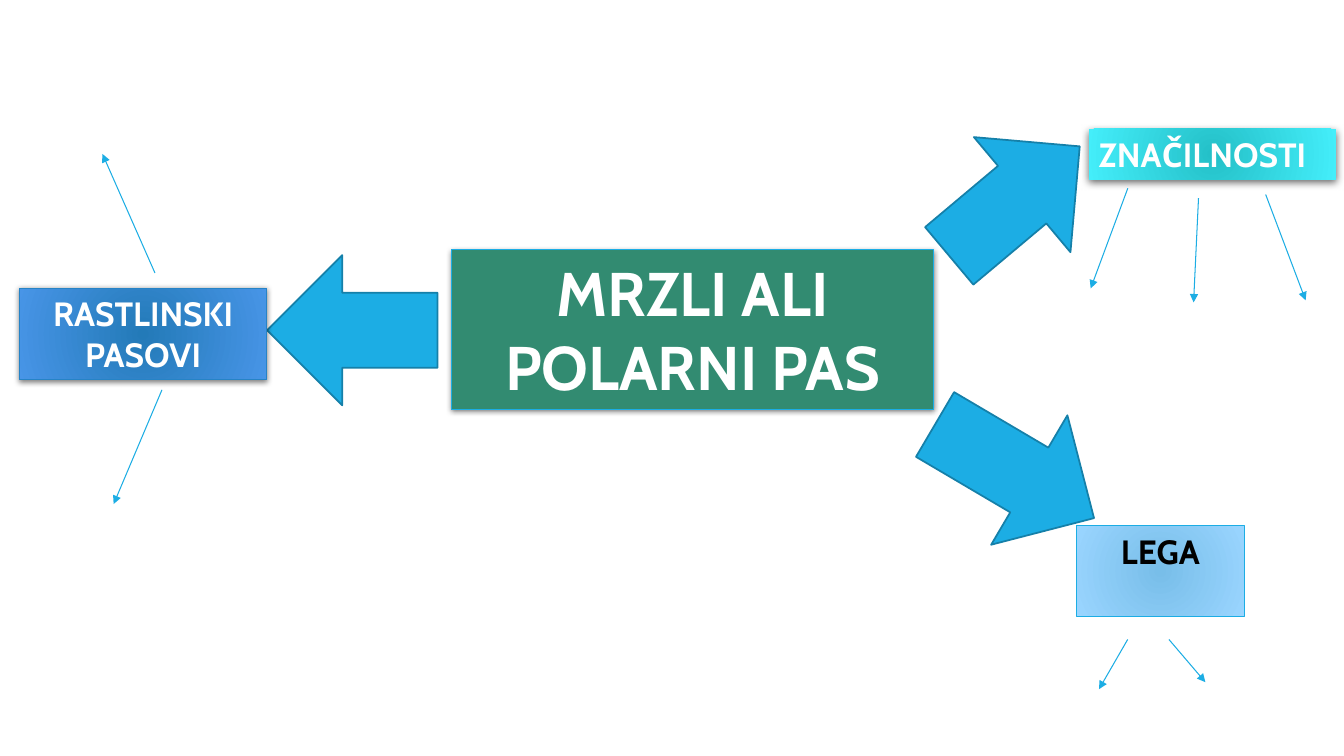
from lxml import etree
from pptx import Presentation
from pptx import util as u
from pptx.dml.color import RGBColor
from pptx.enum import shapes, text
from pptx.oxml import ns

FONT = "Cabin"
BLUE = "1CADE4"
WHITE = "FFFFFF"


def rgb(code):
    """Turn a hex string into a colour."""
    return RGBColor.from_string(code)


def sub(parent, tag, **attributes):
    """Add a DrawingML child element with the given attributes."""
    values = {key: str(value) for key, value in attributes.items()}
    return etree.SubElement(parent, ns.qn(tag), values)


def paint(shape, colours):
    """Fill a shape with one colour, or with a circular gradient of two."""
    if len(colours) == 1:
        shape.fill.solid()
        shape.fill.fore_color.rgb = rgb(colours[0])
        return
    shape.fill.gradient()
    for stop, colour in zip(shape.fill.gradient_stops, colours):
        stop.color.rgb = rgb(colour)
    linear = shape._element.spPr.find(".//" + ns.qn("a:lin"))
    circle = sub(linear.getparent(), "a:path", path="circle")
    sub(circle, "a:fillToRect", l=100000, t=100000, r=100000, b=100000)
    linear.getparent().replace(linear, circle)


def outline(shape, colour, width):
    """Draw the outline of a shape, or hide it when there is no colour."""
    if colour is None:
        shape.line.fill.background()
        return
    shape.line.color.rgb = rgb(colour)
    shape.line.width = u.Pt(width)


def cast_shadow(shape, opacity, blur, distance):
    """Cast a black shadow straight down."""
    effects = shape._element.spPr.find(ns.qn("a:effectLst"))
    shadow = sub(effects, "a:outerShdw", blurRad=u.Pt(blur), dist=u.Pt(distance),
                 dir=5400000, algn="ctr", rotWithShape=0)
    sub(sub(shadow, "a:srgbClr", val="000000"), "a:alpha", val=opacity * 1000)


def draw_label(slide, box, wording, colours, border=None, shadow=None, size=24,
               ink=WHITE, align=text.PP_ALIGN.CENTER):
    """Draw a rectangle with a bold caption at its top."""
    label = slide.shapes.add_shape(shapes.MSO_SHAPE.RECTANGLE, *map(u.Pt, box))
    label.shadow.inherit = False
    paint(label, colours)
    outline(label, border, 0.75)
    if shadow:
        cast_shadow(label, *shadow)
    frame = label.text_frame
    frame.word_wrap = True
    frame.auto_size = text.MSO_AUTO_SIZE.SHAPE_TO_FIT_TEXT
    frame.vertical_anchor = text.MSO_ANCHOR.TOP
    caption = frame.paragraphs[0]
    caption.alignment = align
    run = caption.add_run()
    run.text = wording
    run.font.name = FONT
    run.font.size = u.Pt(size)
    run.font.bold = True
    run.font.color.rgb = rgb(ink)


def draw_block_arrow(slide, box, angle):
    """Draw a wide arrow turned by an angle."""
    arrow = slide.shapes.add_shape(shapes.MSO_SHAPE.RIGHT_ARROW, *map(u.Pt, box))
    arrow.rotation = angle
    arrow.shadow.inherit = False
    paint(arrow, [BLUE])
    outline(arrow, "1580A9", 1.25)


def draw_rays(slide, box, rays):
    """Draw thin arrows whose ends are measured from the corner of a box."""
    left, top = box[:2]
    for x1, y1, x2, y2 in rays:
        ends = left + x1, top + y1, left + x2, top + y2
        ray = slide.shapes.add_connector(shapes.MSO_CONNECTOR.STRAIGHT, *map(u.Pt, ends))
        outline(ray, BLUE, 0.75)
        sub(ray.line._get_or_add_ln(), "a:tailEnd", type="triangle")
        sub(ray._element.spPr, "a:effectLst")


def draw_branch(slide, box, arrow_box, angle, rays, wording, colours, **style):
    """Draw a topic with the wide arrow leading to it and the rays leaving it."""
    draw_block_arrow(slide, arrow_box, angle)
    draw_label(slide, box, wording, colours, **style)
    draw_rays(slide, box, rays)


def main():
    """Build the mind map of the polar zone."""
    deck = Presentation()
    deck.slide_width, deck.slide_height = u.Pt(960), u.Pt(540)
    slide = deck.slides.add_slide(deck.slide_layouts[6])
    soft = (50, 4, 1)
    draw_label(slide, (322.5, 178.5, 344.5, 114), "MRZLI ALI POLARNI PAS", ["328B71"],
               border=BLUE, shadow=soft, size=44)
    draw_branch(slide, (777.6, 92, 177, 36.3), (663.8, 90, 121.7, 107.3), 320,
                [(28, 42.5, 1.5, 114), (78.5, 49.5, 75, 124), (126.5, 47, 155, 122.5)],
                "ZNAČILNOSTI", ["24C0C8", "44EEFA"], shadow=(60, 6, 2),
                align=text.PP_ALIGN.LEFT)
    draw_branch(slide, (769, 375.3, 119.7, 65.4), (658.8, 283, 131.8, 107.3), 30.5,
                [(36.5, 81.5, 16, 117), (66, 81.5, 92, 112)],
                "LEGA", ["78BEE9", "9AD5FF"], border=BLUE, ink="000000")
    draw_branch(slide, (13.7, 206, 177, 65.4), (190.8, 182.2, 121.7, 107.3), 180,
                [(102, 72.5, 67.5, 154), (97, -11, 59.5, -96)],
                "RASTLINSKI PASOVI", ["237AB8", "4895E7"], border="2683C6", shadow=soft)
    deck.save("out.pptx")


if __name__ == "__main__":
    main()
